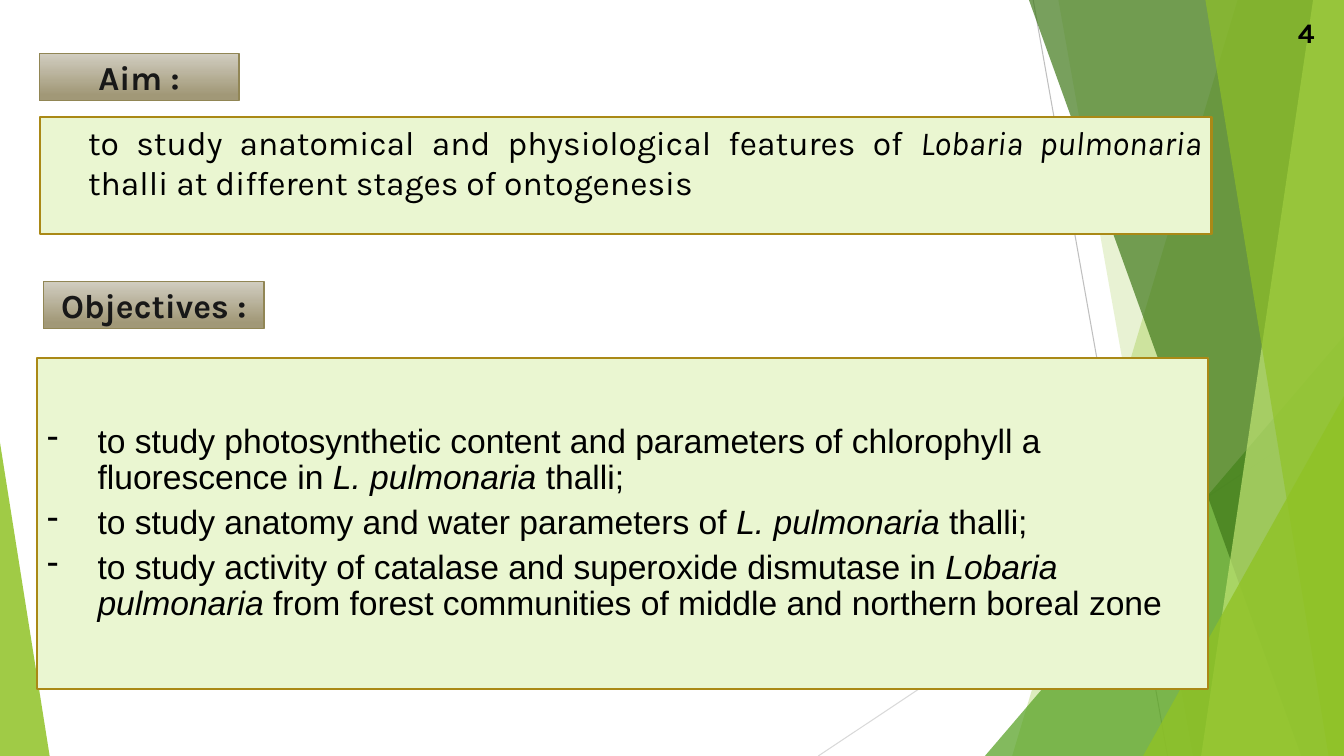
from dataclasses import dataclass

from lxml import etree
from pptx import Presentation
from pptx import util as u
from pptx.dml.color import RGBColor
from pptx.enum import shapes, text
from pptx.oxml import ns


@dataclass(frozen=True)
class Theme:
    lime: str = "90C226"
    leaf: str = "54A021"
    forest: str = "3F7819"
    pale_lime: str = "C0E474"
    panel: str = "EAF6D1"
    panel_edge: str = "AA8916"
    label_top: str = "D1CDC0"
    label_bottom: str = "A19877"
    label_edge: str = "918655"
    label_ink: str = "181818"
    ink: str = "000000"
    ray: str = "BFBFBF"
    soft_ray: str = "D9D9D9"
    heading_font: str = "Karla"
    list_font: str = "Arial"
    body_size: float = 24
    number_size: float = 20


WIDTH, HEIGHT = 960, 540


def add_xml(parent, tag, **attributes):
    return etree.SubElement(parent, ns.qn(tag), **attributes)


class SlideBuilder:
    def __init__(self, slide, theme):
        self.slide, self.theme = slide, theme
        self.shapes = slide.shapes

    def ray(self, start, end, color):
        line = self.shapes.add_connector(
            shapes.MSO_CONNECTOR.STRAIGHT, *map(u.Pt, start + end))
        line.line.color.rgb = RGBColor.from_string(color)
        line.line.width = u.Pt(0.75)
        add_xml(line._element.spPr, "a:effectLst")

    def tint(self, shape, color, opacity):
        shape.shadow.inherit = False
        shape.fill.solid()
        shape.fill.fore_color.rgb = RGBColor.from_string(color)
        shape.line.fill.background()
        paint = shape._element.spPr.find(".//" + ns.qn("a:srgbClr"))
        add_xml(paint, "a:alpha", val=str(opacity * 1000))

    def shard(self, top_x, bottom_x, color, opacity):
        """Full-height facet between a slanted edge and the right slide edge."""
        outline = self.shapes.build_freeform(u.Pt(top_x), 0)
        corners = [(WIDTH, 0), (WIDTH, HEIGHT), (bottom_x, HEIGHT)]
        outline.add_line_segments([(u.Pt(x), u.Pt(y)) for x, y in corners])
        self.tint(outline.convert_to_shape(), color, opacity)

    def corner(self, left, top, width, apex, color, opacity):
        """Triangle that stands on the bottom slide edge."""
        triangle = self.shapes.add_shape(
            shapes.MSO_SHAPE.ISOSCELES_TRIANGLE,
            *map(u.Pt, (left, top, width, HEIGHT - top)))
        triangle.adjustments[0] = apex
        self.tint(triangle, color, opacity)

    def box(self, bounds, edge, edge_width):
        box = self.shapes.add_shape(shapes.MSO_SHAPE.RECTANGLE, *map(u.Pt, bounds))
        box.shadow.inherit = False
        box.line.color.rgb = RGBColor.from_string(edge)
        box.line.width = u.Pt(edge_width)
        box.text_frame.word_wrap = True
        return box

    def style(self, run, font, size, color, bold=False, italic=False):
        run.font.name, run.font.size = font, u.Pt(size)
        run.font.bold, run.font.italic = bold, italic
        run.font.color.rgb = RGBColor.from_string(color)

    def panel(self, bounds, anchor):
        panel = self.box(bounds, self.theme.panel_edge, 1.5)
        panel.fill.solid()
        panel.fill.fore_color.rgb = RGBColor.from_string(self.theme.panel)
        panel.text_frame.vertical_anchor = anchor
        return panel.text_frame

    def statement(self, paragraph, parts, font, align, space_before):
        """Fill a paragraph with text parts; every second part is italic."""
        paragraph.alignment = align
        paragraph.space_before = u.Pt(space_before)
        for index, part in enumerate(parts):
            run = paragraph.add_run()
            run.text = part
            self.style(run, font, self.theme.body_size, self.theme.ink,
                       italic=index % 2 == 1)

    def aim(self, bounds, parts):
        paragraph = self.panel(bounds, text.MSO_ANCHOR.TOP).paragraphs[0]
        self.statement(paragraph, parts, self.theme.heading_font,
                       text.PP_ALIGN.JUSTIFY, 10)
        paragraph._p.get_or_add_pPr().set("marL", str(u.Pt(27)))

    def objectives(self, bounds, items):
        frame = self.panel(bounds, text.MSO_ANCHOR.MIDDLE)
        for index, parts in enumerate(items):
            paragraph = frame.add_paragraph() if index else frame.paragraphs[0]
            self.statement(paragraph, parts, self.theme.list_font,
                           text.PP_ALIGN.LEFT, 6)
            paragraph.line_spacing = 0.9
            properties = paragraph._p.get_or_add_pPr()
            properties.set("marL", str(u.Pt(36)))
            properties.set("indent", str(-u.Pt(36)))
            add_xml(properties, "a:buChar", char="-")

    def label(self, bounds, caption):
        theme = self.theme
        label = self.box(bounds, theme.label_edge, 1)
        label.fill.gradient()
        label.fill.gradient_angle = 270
        stops = [(0, theme.label_top), (0.88, theme.label_bottom)]
        for stop, (position, color) in zip(label.fill.gradient_stops, stops):
            stop.position = position
            stop.color.rgb = RGBColor.from_string(color)
        frame = label.text_frame
        frame.text = caption
        frame.vertical_anchor = text.MSO_ANCHOR.MIDDLE
        frame.paragraphs[0].alignment = text.PP_ALIGN.CENTER
        self.style(frame.paragraphs[0].runs[0], theme.heading_font,
                   theme.body_size, theme.label_ink, bold=True)

    def page_number(self, bounds, number):
        frame = self.shapes.add_textbox(*map(u.Pt, bounds)).text_frame
        frame.word_wrap = True
        frame.text = number
        frame.vertical_anchor = text.MSO_ANCHOR.MIDDLE
        frame.paragraphs[0].alignment = text.PP_ALIGN.RIGHT
        self.style(frame.paragraphs[0].runs[0], self.theme.heading_font,
                   self.theme.number_size, self.theme.ink, bold=True)


def main():
    deck = Presentation()
    deck.slide_width, deck.slide_height = u.Pt(WIDTH), u.Pt(HEIGHT)
    theme = Theme()
    page = SlideBuilder(deck.slides.add_slide(deck.slide_layouts[6]), theme)

    # Faceted green backdrop
    page.ray((738, 0), (834, HEIGHT), theme.ray)
    page.ray((WIDTH, 290), (584.5, HEIGHT), theme.soft_ray)
    page.shard(884, 723, theme.lime, 30)
    page.shard(756, 852, theme.lime, 20)
    page.corner(703.5, 240, 256.5, 1, theme.leaf, 72)
    page.shard(735, 929.5, theme.forest, 70)
    page.shard(938, 858, theme.pale_lime, 70)
    page.shard(861, 949, theme.lime, 65)
    page.corner(816.5, 283, 143.5, 1, theme.lime, 80)
    page.corner(0, 316, 35.5, 0, theme.lime, 85)

    # Aim and page number
    page.aim((28.8, 83.5, 836.6, 83.5), [
        "to study anatomical and physiological features of ",
        "Lobaria pulmonaria ",
        "thalli at different stages of ontogenesis"])
    page.page_number((722, 8.6, 224, 28.8), "4")

    # Objectives
    page.objectives((26.6, 255.5, 836.6, 237), [
        ("to study photosynthetic content and parameters of chlorophyll a "
         "fluorescence in ", "L. pulmonaria ", "thalli;"),
        ("to study anatomy and water parameters of ", "L. pulmonaria ", "thalli;"),
        ("to study activity of catalase and superoxide dismutase in ",
         "Lobaria pulmonaria ",
         "from forest communities of middle and northern boreal zone")])

    # Section labels
    page.label((28, 38.2, 142.6, 33.8), "Aim :")
    page.label((31, 201, 157.7, 33.8), "Objectives :")

    deck.save("out.pptx")


if __name__ == "__main__":
    main()
